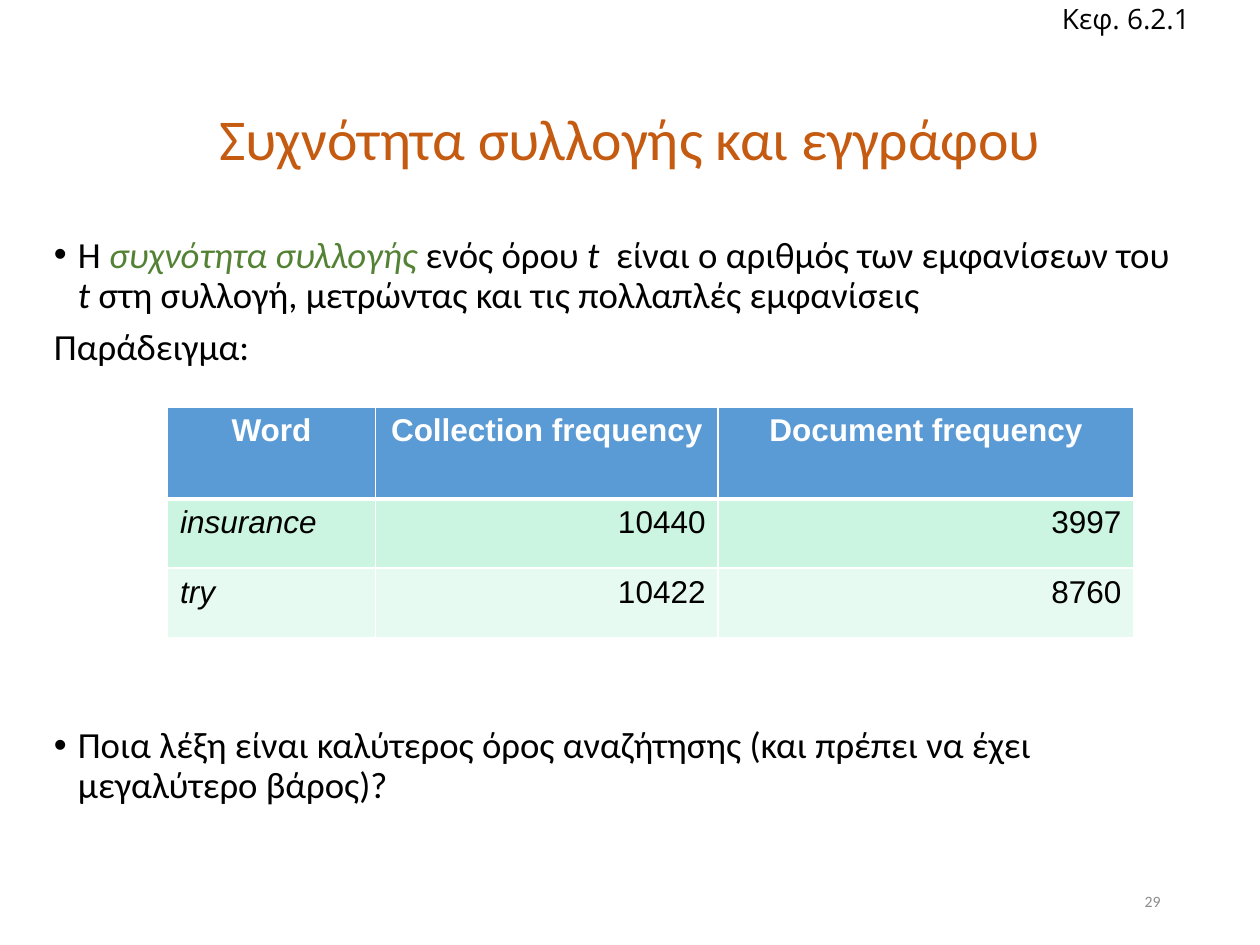
import pptx
import pptx.dml.color
import pptx.enum.text
import pptx.oxml.ns
import pptx.util
from lxml import etree

Inches = pptx.util.Inches
Pt = pptx.util.Pt
RGBColor = pptx.dml.color.RGBColor
ALIGN = pptx.enum.text.PP_ALIGN
ANCHOR = pptx.enum.text.MSO_ANCHOR
qn = pptx.oxml.ns.qn

BLACK = RGBColor(0, 0, 0)
WHITE = RGBColor(255, 255, 255)
ORANGE = RGBColor(0xC5, 0x5A, 0x11)
GREEN = RGBColor(0x54, 0x82, 0x35)
GRAY = RGBColor(0x8C, 0x8C, 0x8C)
BLUE = RGBColor(0x5B, 0x9B, 0xD5)
MINT = RGBColor(0xCB, 0xF5, 0xE1)
PALE_MINT = RGBColor(0xE7, 0xFA, 0xF1)


class SlideBuilder:
    """Holds the slide style and adds each kind of element to the slide."""

    body_font = "Calibri"
    table_font = "Arial"
    body_size = 21
    table_size = 18

    def __init__(self, slide):
        self.slide = slide

    def format_run(self, run, font, size, color, bold=False, italic=False):
        run.font.name = font
        run.font.size = Pt(size)
        run.font.color.rgb = color
        run.font.bold = bold
        run.font.italic = italic

    def add_frame(self, left, top, width, height, anchor, wrap=True):
        shape = self.slide.shapes.add_textbox(
            Inches(left), Inches(top), Inches(width), Inches(height))
        text_frame = shape.text_frame
        text_frame.word_wrap = wrap
        text_frame.vertical_anchor = anchor
        return text_frame

    def add_label(self, text, box, size, color, align=ALIGN.LEFT, font=body_font,
                  wrap=True, line_spacing=1.0):
        text_frame = self.add_frame(*box, ANCHOR.MIDDLE, wrap)
        text_frame.text = text
        paragraph = text_frame.paragraphs[0]
        paragraph.alignment = align
        paragraph.line_spacing = line_spacing
        self.format_run(paragraph.runs[0], font, size, color)

    def add_bullet(self, paragraph):
        properties = paragraph._p.get_or_add_pPr()
        properties.set("marL", str(Inches(0.19)))
        properties.set("indent", str(Inches(-0.19)))
        etree.SubElement(properties, qn("a:buFont"), typeface="Arial")
        etree.SubElement(properties, qn("a:buChar"), char="•")

    def add_body(self, box, paragraphs):
        text_frame = self.add_frame(*box, ANCHOR.TOP)
        for index, (bulleted, pieces) in enumerate(paragraphs):
            paragraph = text_frame.add_paragraph() if index else text_frame.paragraphs[0]
            paragraph.line_spacing = 0.9
            paragraph.space_before = Pt(7.5)
            if bulleted:
                self.add_bullet(paragraph)
            for text, color, italic in pieces:
                run = paragraph.add_run()
                run.text = text
                self.format_run(run, self.body_font, self.body_size, color, italic=italic)

    def add_borders(self, cell, widths):
        properties = cell._tc.get_or_add_tcPr()
        for side, width in widths.items():
            line = etree.SubElement(properties, qn(f"a:ln{side}"), w=str(Pt(width)))
            fill = etree.SubElement(line, qn("a:solidFill"))
            etree.SubElement(fill, qn("a:srgbClr"), val=str(WHITE))

    def add_table(self, box, column_widths, row_heights, rows, fills):
        table = self.slide.shapes.add_table(
            len(rows), len(column_widths), *map(Inches, box)).table
        for column, width in zip(table.columns, column_widths):
            column.width = Inches(width)
        for row, height in zip(table.rows, row_heights):
            row.height = Inches(height)
        for row_index, values in enumerate(rows):
            header = row_index == 0
            widths = {"L": 1, "R": 1, "T": 3 if row_index == 1 else 1, "B": 3 if header else 1}
            for column_index, value in enumerate(values):
                word = not header and column_index == 0
                cell = table.cell(row_index, column_index)
                self.add_borders(cell, widths)
                cell.fill.solid()
                cell.fill.fore_color.rgb = fills[row_index]
                cell.text_frame.text = value
                paragraph = cell.text_frame.paragraphs[0]
                paragraph.alignment = (
                    ALIGN.CENTER if header else ALIGN.LEFT if word else ALIGN.RIGHT)
                self.format_run(paragraph.runs[0], self.table_font, self.table_size,
                                WHITE if header else BLACK, bold=header, italic=word)


def main():
    presentation = pptx.Presentation()
    presentation.slide_width = Inches(10)
    presentation.slide_height = Inches(7.5)
    builder = SlideBuilder(presentation.slides.add_slide(presentation.slide_layouts[6]))

    builder.add_label("Συχνότητα συλλογής και εγγράφου", (0.69, 0.4, 8.62, 1.45),
                      33, ORANGE, ALIGN.CENTER, line_spacing=0.9)
    builder.add_body((0.33, 1.83, 9.17, 1.3), [
        (True, [
            ("Η ", BLACK, False),
            ("συχνότητα συλλογής ", GREEN, True),
            ("ενός όρου ", BLACK, False),
            ("t ", BLACK, True),
            (" είναι ο αριθμός των εμφανίσεων του ", BLACK, False),
            ("t ", BLACK, True),
            ("στη συλλογή, μετρώντας και τις πολλαπλές εμφανίσεις", BLACK, False),
        ]),
        (False, [("Παράδειγμα:", BLACK, False)]),
    ])
    builder.add_body((0.33, 5.72, 9.17, 0.8), [
        (True, [("Ποια λέξη είναι καλύτερος όρος αναζήτησης (και πρέπει να έχει "
                 "μεγαλύτερο βάρος)?", BLACK, False)]),
    ])
    builder.add_label("29", (7.06, 6.95, 2.25, 0.4), 9, GRAY, ALIGN.RIGHT)
    builder.add_table(
        (1.33, 3.23, 7.67, 1.83), (1.65, 2.72, 3.3), (0.73, 0.55, 0.55),
        [
            ("Word", "Collection frequency", "Document frequency"),
            ("insurance", "10440", "3997"),
            ("try", "10422", "8760"),
        ],
        (BLUE, MINT, PALE_MINT))
    builder.add_label("Κεφ. 6.2.1", (8.33, -0.04, 1.31, 0.37), 16, BLACK,
                      font="Open Sans", wrap=False)

    presentation.save("out.pptx")


if __name__ == "__main__":
    main()
